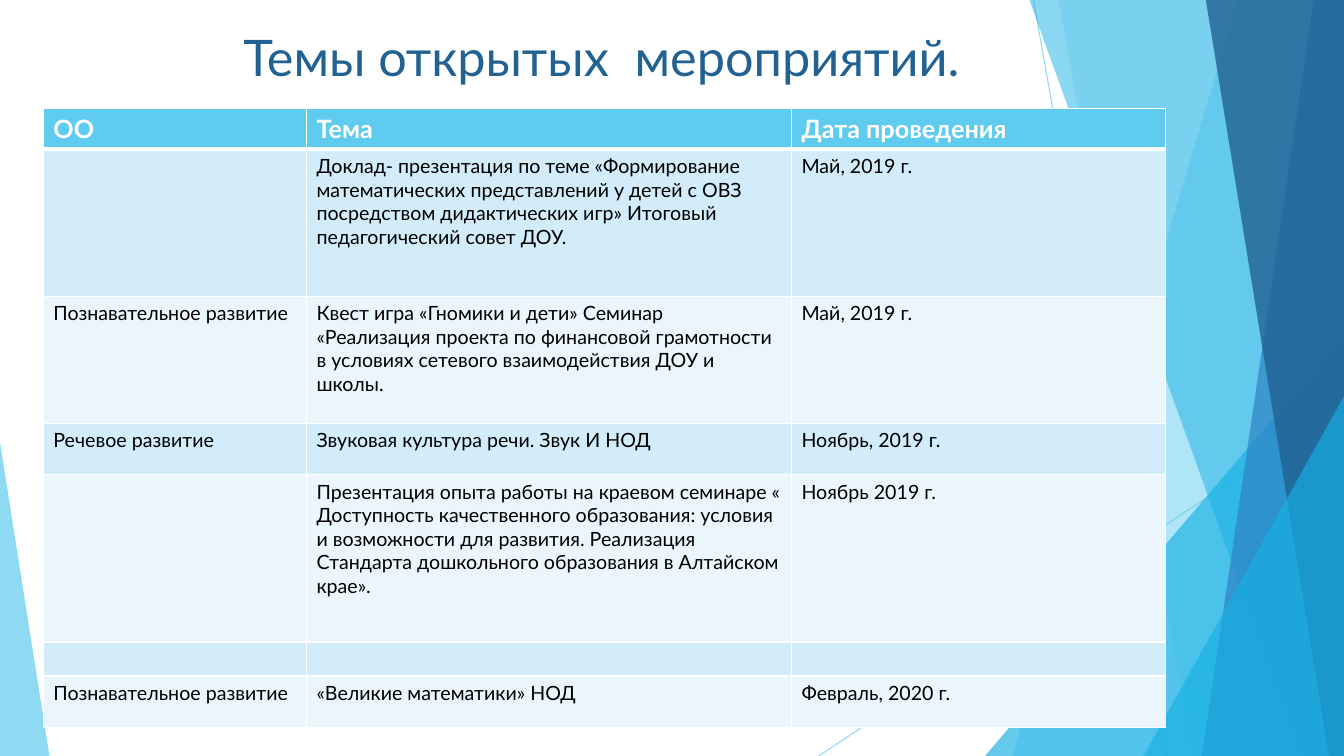
from dataclasses import dataclass
from typing import Any

from pptx import Presentation
from pptx import util as u
from pptx.dml import color as col
from pptx.enum import shapes as sh
from pptx.enum import text as tx
from pptx.oxml import ns
from lxml import etree

PX = 9144


@dataclass(frozen=True)
class Theme:
    font: str = "Lato"
    white: str = "FFFFFF"
    black: str = "000000"
    sky: str = "5FCBEF"
    cyan: str = "17B0E4"
    blue: str = "2E83C3"
    navy: str = "226292"
    bands: tuple[str, str] = ("D2ECF9", "EAF6FC")
    title: int = 36
    head: int = 18
    body: int = 14


T = Theme()


@dataclass(frozen=True)
class Ray:
    start: tuple[int, int]
    end: tuple[int, int]


@dataclass(frozen=True)
class Shard:
    top: tuple[int, int]
    base: tuple[int, int]
    fill: str
    alpha: int


@dataclass(frozen=True)
class Wedge:
    box: tuple[int, int, int, int]
    tip: float
    fill: str
    alpha: int


@dataclass(frozen=True)
class Row:
    high: int
    cells: tuple[str, str, str]


WIDE, HIGH = 1333, 750
DECOR = (
    Ray((1025, 0), (1158, HIGH)),
    Ray((WIDE, 403), (812, HIGH)),
    Shard((1228, WIDE), (1004, WIDE), T.sky, 36),
    Shard((1050, WIDE), (1183, WIDE), T.sky, 20),
    Wedge((977, 333, 356, 417), 1, T.cyan, 66),
    Shard((1021, WIDE), (1291, WIDE), T.cyan, 50),
    Shard((1303, WIDE), (1192, WIDE), T.blue, 70),
    Shard((1196, WIDE), (1318, WIDE), T.navy, 80),
    Wedge((1134, 393, 199, 357), 1, T.cyan, 66),
    Wedge((0, 439, 49, 311), 0, T.sky, 70),
)
COLS = (261, 481, 371)
ROWS = (
    Row(38, ("ОО", "Тема", "Дата проведения")),
    Row(146, ("", "Доклад- презентация по теме «Формирование математических представлений "
              "у детей с ОВЗ посредством дидактических игр» Итоговый педагогический совет ДОУ.",
              "Май, 2019 г.")),
    Row(126, ("Познавательное развитие",
              "Квест игра «Гномики и дети» Семинар «Реализация проекта по финансовой "
              "грамотности в условиях сетевого взаимодействия ДОУ и школы.",
              "Май, 2019 г.")),
    Row(51, ("Речевое развитие", "Звуковая культура речи. Звук И НОД", "Ноябрь, 2019 г.")),
    Row(166, ("", "Презентация опыта работы на краевом семинаре « Доступность качественного "
              "образования: условия и возможности для развития. Реализация Стандарта "
              "дошкольного образования в Алтайском крае».", "Ноябрь 2019 г.")),
    Row(32, ("", "", "")),
    Row(51, ("Познавательное развитие", "«Великие математики» НОД", "Февраль, 2020 г.")),
)


def px(*nums: int) -> list[u.Emu]:
    return [u.Emu(n * PX) for n in nums]


def rgb(code: str) -> col.RGBColor:
    return col.RGBColor.from_string(code)


def fade(shape: Any, alpha: int) -> None:
    clr = next(shape._element.spPr.iter(ns.qn("a:srgbClr")))
    etree.SubElement(clr, ns.qn("a:alpha"), val=str(alpha * 1000))


def paint(shape: Any, fill: str, alpha: int) -> None:
    shape.shadow.inherit = False
    shape.fill.solid()
    shape.fill.fore_color.rgb = rgb(fill)
    shape.line.fill.background()
    fade(shape, alpha)


def draw(pool: Any, part: Ray | Shard | Wedge) -> None:
    if isinstance(part, Ray):
        line = pool.add_connector(sh.MSO_CONNECTOR.STRAIGHT, *px(*part.start, *part.end))
        line.line.color.rgb = rgb(T.sky)
        line.line.width = u.Pt(0.75)
        fade(line, 70)
        etree.SubElement(line._element.spPr, ns.qn("a:effectLst"))
    elif isinstance(part, Shard):
        (tl, tr), (bl, br) = part.top, part.base
        form = pool.build_freeform(tl, 0, scale=PX)
        form.add_line_segments([(tr, 0), (br, HIGH), (bl, HIGH)], close=True)
        paint(form.convert_to_shape(), part.fill, part.alpha)
    else:
        wedge = pool.add_shape(sh.MSO_SHAPE.ISOSCELES_TRIANGLE, *px(*part.box))
        wedge.adjustments[0] = part.tip
        paint(wedge, part.fill, part.alpha)


def write(para: Any, words: str, size: int, tint: str, bold: bool = False) -> None:
    if not words:
        etree.SubElement(para._p, ns.qn("a:endParaRPr"), sz=str(size * 100))
        return
    run = para.add_run()
    run.text = words
    run.font.name = T.font
    run.font.size = u.Pt(size)
    run.font.bold = bold
    run.font.color.rgb = rgb(tint)


def edge(cell: Any, base: int) -> None:
    props = cell._tc.get_or_add_tcPr()
    widths = {"lnL": 1, "lnR": 1, "lnT": 1, "lnB": base}
    for spot, (tag, wide) in enumerate(widths.items()):
        line = etree.Element(ns.qn(f"a:{tag}"), w=str(u.Pt(wide)))
        fill = etree.SubElement(line, ns.qn("a:solidFill"))
        etree.SubElement(fill, ns.qn("a:srgbClr"), val=T.white)
        props.insert(spot, line)


def grid(pool: Any) -> None:
    box = px(43, 108, sum(COLS), sum(row.high for row in ROWS))
    table = pool.add_table(len(ROWS), len(COLS), *box).table
    for part, wide in zip(table.columns, COLS):
        part.width = u.Emu(wide * PX)
    for r, row in enumerate(ROWS):
        table.rows[r].height = u.Emu(row.high * PX)
        head = r == 0
        for c, words in enumerate(row.cells):
            cell = table.cell(r, c)
            cell.fill.solid()
            cell.fill.fore_color.rgb = rgb(T.sky if head else T.bands[(r - 1) % 2])
            edge(cell, 3 if head else 1)
            write(cell.text_frame.paragraphs[0], words, T.head if head else T.body,
                  T.white if head else T.black, head)


def main() -> None:
    deck = Presentation()
    deck.slide_width, deck.slide_height = px(WIDE, HIGH)
    slide = deck.slides.add_slide(deck.slide_layouts[5])
    pool = slide.shapes
    for part in DECOR:
        draw(pool, part)
    title = pool.title
    title.left, title.top, title.width, title.height = px(133, 21, 940, 144)
    frame = title.text_frame
    frame.auto_size = tx.MSO_AUTO_SIZE.NONE
    frame.vertical_anchor = tx.MSO_ANCHOR.TOP
    para = frame.paragraphs[0]
    para.alignment = tx.PP_ALIGN.CENTER
    write(para, "Темы открытых  мероприятий. ", T.title, T.navy)
    pool._spTree.append(title._element)
    grid(pool)
    deck.save("out.pptx")


if __name__ == "__main__":
    main()
